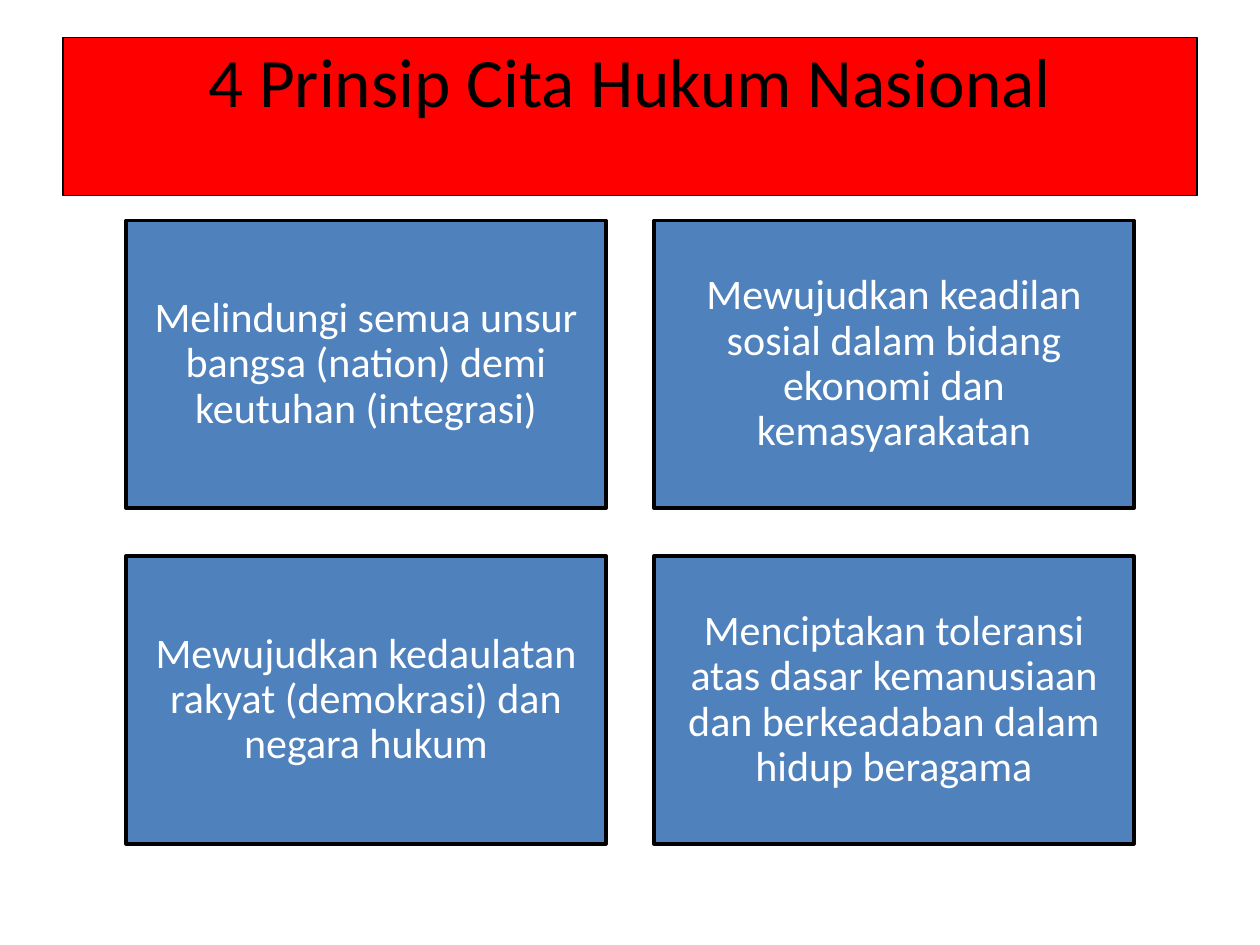
from pptx import Presentation
from pptx.dml.color import RGBColor
from pptx.enum.shapes import MSO_SHAPE as Shape
from pptx.enum.text import MSO_ANCHOR as Anchor, MSO_AUTO_SIZE as AutoSize, PP_ALIGN as Align
from pptx.util import Pt

RED = RGBColor(0xFF, 0x00, 0x00)
BLUE = RGBColor(0x4F, 0x81, 0xBD)
BLACK = RGBColor(0x00, 0x00, 0x00)
WHITE = RGBColor(0xFF, 0xFF, 0xFF)
FONT = "Calibri"

TITLE = "4 Prinsip Cita Hukum Nasional"
PRINCIPLES = [
    "Melindungi semua unsur bangsa (nation) demi keutuhan (integrasi)",
    "Mewujudkan keadilan sosial dalam bidang ekonomi dan kemasyarakatan",
    "Mewujudkan kedaulatan rakyat (demokrasi) dan negara hukum",
    "Menciptakan toleransi atas dasar kemanusiaan dan berkeadaban dalam hidup beragama",
]
COLUMNS = 2
GRID_LEFT, GRID_TOP = 72, 126
BOX_WIDTH, BOX_HEIGHT, GAP = 274.3, 164.4, 27.4


def paint(shape, fill, line_width):
    shape.fill.solid()
    shape.fill.fore_color.rgb = fill
    shape.line.color.rgb = BLACK
    shape.line.width = Pt(line_width)


def write(shape, text, size, color, anchor):
    frame = shape.text_frame
    frame.text = text
    frame.word_wrap = True
    frame.auto_size = AutoSize.NONE
    frame.vertical_anchor = anchor
    para = frame.paragraphs[0]
    para.alignment = Align.CENTER
    font = para.runs[0].font
    font.name, font.size, font.color.rgb = FONT, Pt(size), color
    return frame


def add_title(page):
    title = page.shapes.title
    title.left, title.top, title.width, title.height = Pt(36), Pt(21.6), Pt(648), Pt(90)
    paint(title, RED, 0.75)
    write(title, TITLE, 39.6, BLACK, Anchor.TOP).margin_top = Pt(0)


def add_principle(page, index, text):
    row, column = divmod(index, COLUMNS)
    left = GRID_LEFT + column * (BOX_WIDTH + GAP)
    top = GRID_TOP + row * (BOX_HEIGHT + GAP)
    box = page.shapes.add_shape(
        Shape.RECTANGLE, Pt(left), Pt(top), Pt(BOX_WIDTH), Pt(BOX_HEIGHT)
    )
    box.shadow.inherit = False
    paint(box, BLUE, 2)
    frame = write(box, text, 24, WHITE, Anchor.MIDDLE)
    frame.margin_left = frame.margin_right = Pt(7.2)
    frame.margin_top = frame.margin_bottom = Pt(7.2)
    frame.paragraphs[0].line_spacing = 0.9


def main():
    deck = Presentation()
    deck.slide_width, deck.slide_height = Pt(720), Pt(540)
    page = deck.slides.add_slide(deck.slide_layouts.get_by_name("Title Only"))
    add_title(page)
    for index, text in enumerate(PRINCIPLES):
        add_principle(page, index, text)
    deck.save("out.pptx")


if __name__ == "__main__":
    main()
